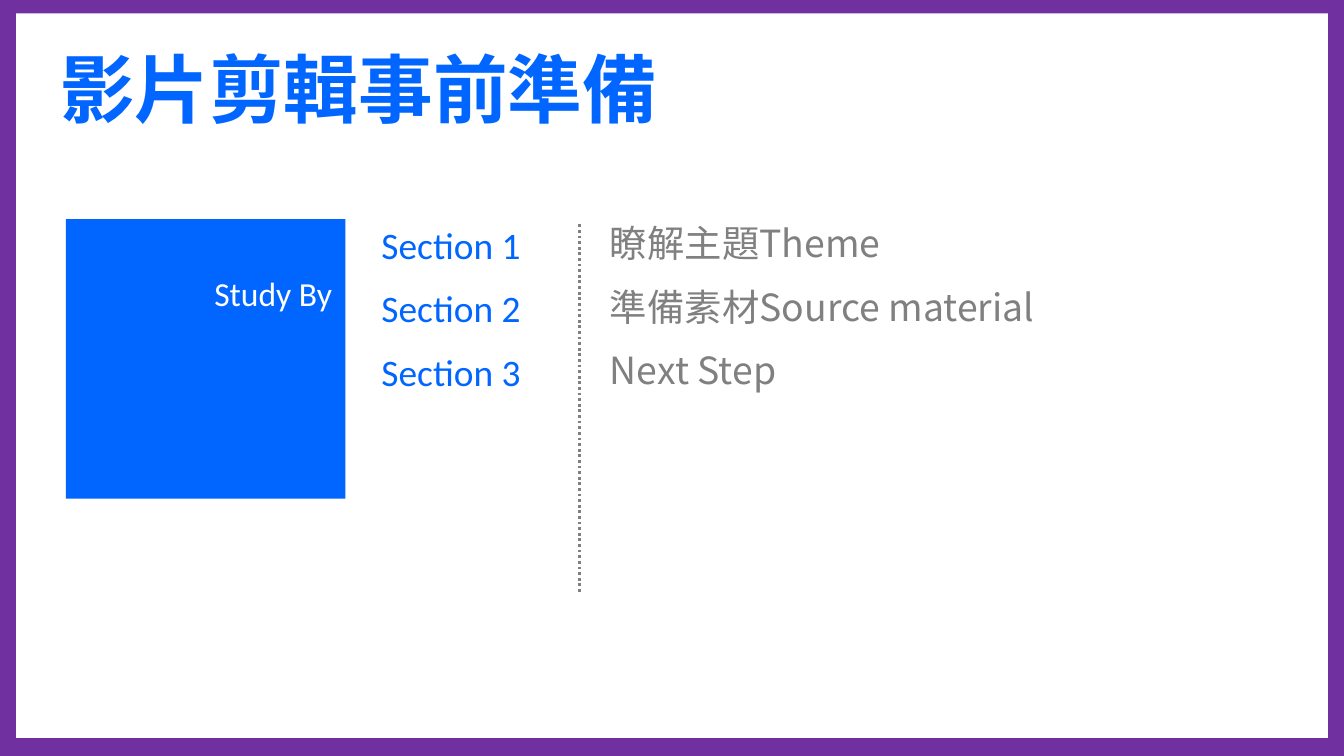
from lxml import etree
from pptx import Presentation
from pptx.dml.color import RGBColor
from pptx.enum.dml import MSO_LINE
from pptx.enum.shapes import MSO_CONNECTOR, MSO_SHAPE
from pptx.enum.text import MSO_ANCHOR, PP_ALIGN
from pptx.oxml.ns import qn
from pptx.util import Inches, Pt

PURPLE = RGBColor(0x70, 0x30, 0xA0)
WHITE = RGBColor(0xFF, 0xFF, 0xFF)
BLUE = RGBColor(0x00, 0x66, 0xFF)
GRAY = RGBColor(0x80, 0x80, 0x80)
LATIN = "Calibri"
CJK = "Noto Sans CJK SC"
RECTANGLE = MSO_SHAPE.RECTANGLE
STRAIGHT = MSO_CONNECTOR.STRAIGHT
DOTTED = MSO_LINE.ROUND_DOT
TOP, MIDDLE = MSO_ANCHOR.TOP, MSO_ANCHOR.MIDDLE
LEFT, RIGHT = PP_ALIGN.LEFT, PP_ALIGN.RIGHT

TITLE = "影片剪輯事前準備"
SECTIONS = [
    ("Section 1", "瞭解主題Theme"),
    ("Section 2", "準備素材Source material"),
    ("Section 3", "Next Step"),
]


def add_rect(s, x, y, w, h, color):
    sp = s.shapes.add_shape(RECTANGLE, Inches(x), Inches(y), Inches(w), Inches(h))
    sp.shadow.inherit = False
    sp.fill.solid()
    sp.fill.fore_color.rgb = color
    sp.line.fill.background()


def add_text(s, x, y, w, h, lines, size, font, color, bold=False,
             align=LEFT, anchor=TOP, spacing=None, after=0):
    sp = s.shapes.add_textbox(Inches(x), Inches(y), Inches(w), Inches(h))
    tf = sp.text_frame
    tf.word_wrap = True
    tf.vertical_anchor = anchor
    tf.text = "\n".join(lines)
    for p in tf.paragraphs:
        p.alignment = align
        p.space_after = Pt(after)
        if spacing:
            p.line_spacing = Pt(spacing)
        for r in p.runs:
            r.font.size = Pt(size)
            r.font.bold = bold
            r.font.color.rgb = color
            r.font.name = font
            etree.SubElement(r.font._element, qn("a:ea"), typeface=font)


def add_divider(s, x, top, bottom):
    sp = s.shapes.add_connector(STRAIGHT, Inches(x), Inches(top), Inches(x), Inches(bottom))
    sp.line.color.rgb = GRAY
    sp.line.width = Pt(1.5)
    sp.line.dash_style = DOTTED
    etree.SubElement(sp._element.spPr, qn("a:effectLst"))


def main():
    prs = Presentation()
    prs.slide_width = Inches(10)
    prs.slide_height = prs.slide_width * 9 // 16
    s = prs.slides.add_slide(prs.slide_layouts[6])
    s.background.fill.solid()
    s.background.fill.fore_color.rgb = PURPLE

    add_rect(s, 0.12, 0.1, 9.76, 5.39, WHITE)
    add_rect(s, 0.49, 1.63, 2.08, 2.08, BLUE)
    add_text(s, 0.28, 2, 2.29, 0.38, ["Study By"], 18, LATIN, WHITE,
             align=RIGHT, spacing=20)
    add_text(s, 0.35, 0.22, 9.04, 0.86, [TITLE], 40, CJK, BLUE,
             bold=True, anchor=MIDDLE)

    labels, topics = zip(*SECTIONS)
    add_text(s, 2.74, 1.63, 2.4, 2.79, labels, 20, LATIN, BLUE, spacing=22, after=12)
    add_divider(s, 4.31, 1.67, 4.41)
    add_text(s, 4.44, 1.62, 5.44, 1.36, topics, 20, CJK, GRAY, spacing=22, after=12)

    prs.save("out.pptx")


if __name__ == "__main__":
    main()
